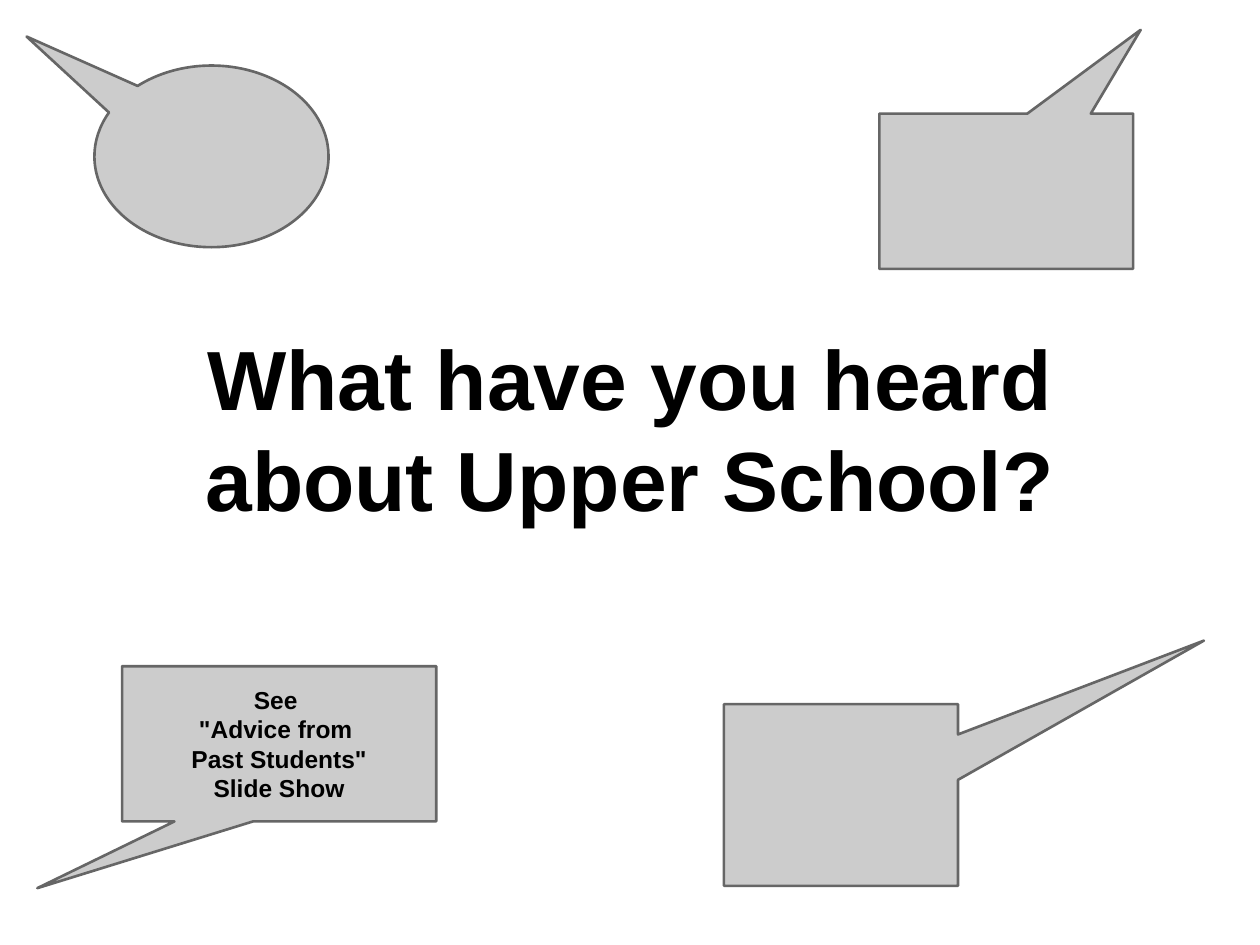
from pptx import Presentation
from pptx import util as u
from pptx.dml.color import RGBColor
from pptx.enum import shapes, text

Pt = u.Pt
BLACK = RGBColor(0x00, 0x00, 0x00)
BUBBLE_FILL = RGBColor(0xCC, 0xCC, 0xCC)
BUBBLE_EDGE = RGBColor(0x66, 0x66, 0x66)
Shape = shapes.MSO_SHAPE
Anchor = text.MSO_ANCHOR


class SlideBuilder:
    FONT = "Arial"
    INSET = 7.2
    LEADING = 1.2
    EDGE_WIDTH = 1.5

    def __init__(self, slide):
        self.slide = slide

    def add_lines(self, shape, lines, size, anchor):
        """Fill a shape with bold centred lines, one paragraph each."""
        frame = shape.text_frame
        frame.word_wrap = True
        frame.vertical_anchor = anchor
        frame.margin_left = frame.margin_right = Pt(self.INSET)
        frame.margin_top = frame.margin_bottom = Pt(self.INSET)
        for index, line in enumerate(lines):
            paragraph = frame.add_paragraph() if index else frame.paragraphs[0]
            paragraph.alignment = text.PP_ALIGN.CENTER
            paragraph.line_spacing = Pt(size * self.LEADING)
            run = paragraph.add_run()
            run.text = line
            run.font.name = self.FONT
            run.font.size = Pt(size)
            run.font.bold = True
            run.font.color.rgb = BLACK

    def title(self, box, wording, size):
        heading = self.slide.shapes.add_textbox(*map(Pt, box))
        self.add_lines(heading, [wording], size, Anchor.BOTTOM)

    def bubble(self, kind, box, adjustments, lines=(), size=14):
        """Add a callout; the first two adjustments place its tip."""
        callout = self.slide.shapes.add_shape(kind, *map(Pt, box))
        for index, value in enumerate(adjustments):
            callout.adjustments[index] = value
        callout.shadow.inherit = False
        callout.fill.solid()
        callout.fill.fore_color.rgb = BUBBLE_FILL
        callout.line.color.rgb = BUBBLE_EDGE
        callout.line.width = Pt(self.EDGE_WIDTH)
        self.add_lines(callout, lines, size, Anchor.MIDDLE)


def main():
    deck = Presentation()
    deck.slide_width, deck.slide_height = Pt(720), Pt(540)
    builder = SlideBuilder(deck.slides.add_slide(deck.slide_layouts[6]))

    builder.title((54, 187.2, 612, 121.7),
                  "What have you heard about Upper School?", 48)
    advice = ["See ", '"Advice from ', 'Past Students"', "Slide Show"]
    builder.bubble(Shape.ROUNDED_RECTANGULAR_CALLOUT,
                   (69.8, 380.7, 179.5, 88.7), (-0.77, 0.93, 0), advice)
    builder.bubble(Shape.ROUNDED_RECTANGULAR_CALLOUT,
                   (413.7, 402.4, 133.8, 103.8), (1.55, -0.85, 0))
    builder.bubble(Shape.OVAL_CALLOUT,
                   (54, 37.5, 133.8, 103.8), (-0.79, -0.66))
    builder.bubble(Shape.RECTANGULAR_CALLOUT,
                   (502.5, 64.9, 145, 88.7), (0.53, -1.04))

    deck.save("out.pptx")


if __name__ == "__main__":
    main()
